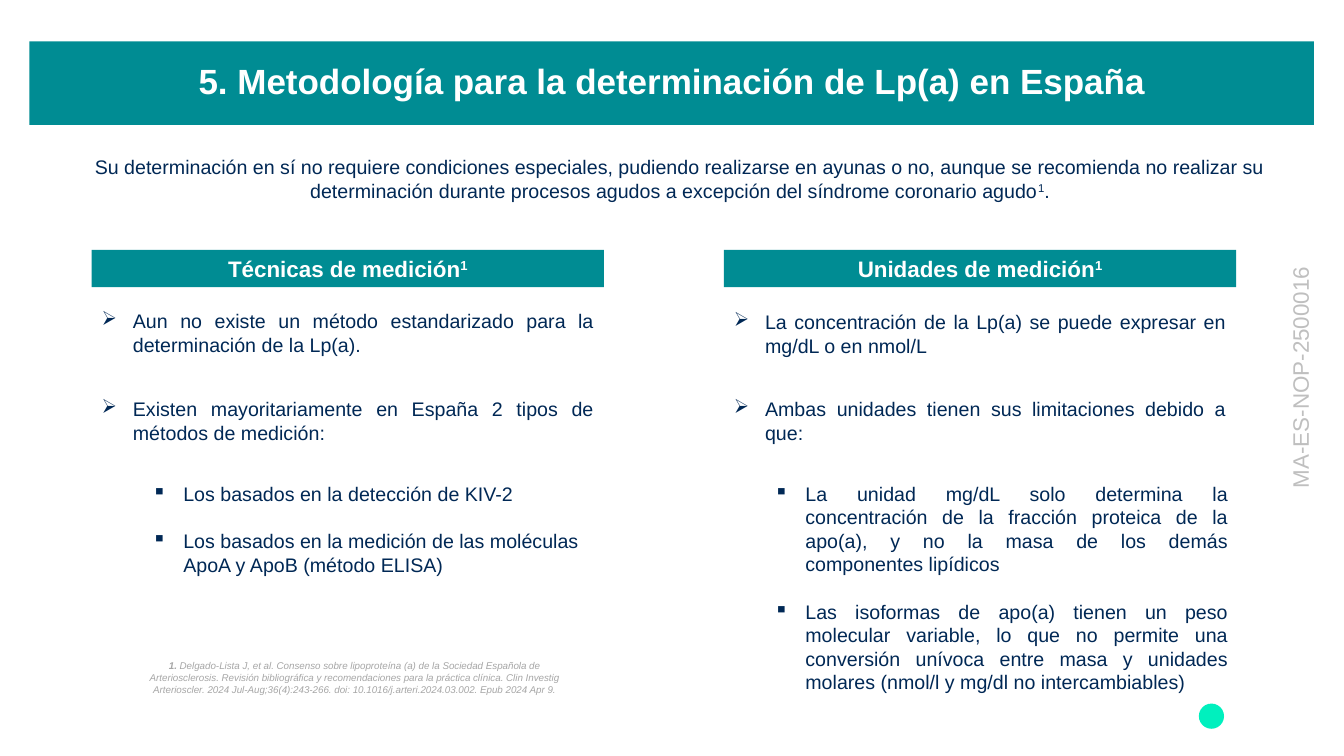
from dataclasses import dataclass
from typing import Optional

from lxml import etree
from pptx import Presentation
from pptx.dml import color
from pptx.enum import shapes, text
from pptx.oxml import ns
from pptx.util import Inches, Pt

COLORS = {
    "teal": "008C93",
    "navy": "002855",
    "mint": "00F0BE",
    "white": "FFFFFF",
    "citation": "A6A6A6",
    "code": "BFBFBF",
}
FONT = "Arial"
CENTER = text.PP_ALIGN.CENTER
JUSTIFY = text.PP_ALIGN.JUSTIFY
LEFT = text.PP_ALIGN.LEFT
COLUMN_WIDTH = 5.08
HANGING = 0.31
LINE_GAP = 17


@dataclass(frozen=True)
class Span:
    text: str
    raised: bool = False
    bold: Optional[bool] = None


@dataclass(frozen=True)
class Block:
    left: float
    top: float
    width: float
    height: float
    paras: list[list[Span]]
    size: float = 14
    color: str = "navy"
    align: text.PP_ALIGN = CENTER
    fill: Optional[str] = None
    bullet: Optional[str] = None
    indent: float = HANGING
    bold: bool = False
    italic: bool = False
    rotation: float = 0


def rgb(name: str) -> color.RGBColor:
    return color.RGBColor.from_string(COLORS[name])


def set_bullet(para, bullet: str, indent: float) -> None:
    props = para._p.get_or_add_pPr()
    props.set("marL", str(Inches(indent)))
    props.set("indent", str(-Inches(HANGING)))
    etree.SubElement(props, ns.qn("a:buChar")).set("char", bullet)


def set_font(font, size: float, color_name: str, bold: bool, italic: bool = False) -> None:
    font.name = FONT
    font.size = Pt(size)
    font.bold = bold
    font.italic = italic
    font.color.rgb = rgb(color_name)


def place(shape, left: float, top: float, width: float, height: float) -> None:
    shape.left, shape.top = Inches(left), Inches(top)
    shape.width, shape.height = Inches(width), Inches(height)


def fill_plain(shape, color_name: str) -> None:
    shape.fill.solid()
    shape.fill.fore_color.rgb = rgb(color_name)
    shape.line.fill.background()


def add_block(page, block: Block) -> None:
    bounds = [Inches(n) for n in (block.left, block.top, block.width, block.height)]
    if block.fill:
        box = page.shapes.add_shape(shapes.MSO_SHAPE.RECTANGLE, *bounds)
        box.shadow.inherit = False
        fill_plain(box, block.fill)
    else:
        box = page.shapes.add_textbox(*bounds)
    box.rotation = block.rotation
    frame = box.text_frame
    frame.word_wrap = True
    frame.auto_size = text.MSO_AUTO_SIZE.SHAPE_TO_FIT_TEXT
    frame.vertical_anchor = text.MSO_ANCHOR.TOP
    for index, spans in enumerate(block.paras):
        para = frame.add_paragraph() if index else frame.paragraphs[0]
        if block.bullet:
            set_bullet(para, block.bullet, block.indent)
        para.alignment = block.align
        if index:
            para.space_before = Pt(LINE_GAP)
        set_font(para.font, block.size, block.color, block.bold, block.italic)
        for span in spans:
            run = para.add_run()
            run.text = span.text
            if span.bold is not None:
                run.font.bold = span.bold
            if span.raised:
                run._r.get_or_add_rPr().set("baseline", "30000")


def add_title(page, wording: str) -> None:
    title = page.shapes.title
    place(title, 0.29, 0.41, 12.74, 0.83)
    fill_plain(title, "teal")
    frame = title.text_frame
    frame.text = wording
    frame.word_wrap = True
    frame.auto_size = text.MSO_AUTO_SIZE.NONE
    frame.vertical_anchor = text.MSO_ANCHOR.MIDDLE
    frame.margin_left = frame.margin_right = frame.margin_top = frame.margin_bottom = 0
    para = frame.paragraphs[0]
    para.alignment = CENTER
    para.line_spacing = 0.9
    set_font(para.font, 25, "white", True)


def heading(left: float, wording: str) -> Block:
    return Block(left, 2.48, COLUMN_WIDTH, 0.37, [[Span(wording), Span("1", raised=True)]],
                 size=16, color="white", fill="teal", bold=True)


def point(left: float, top: float, wording: str) -> Block:
    return Block(left, top, COLUMN_WIDTH, 0.57, [[Span(wording)]], align=JUSTIFY, bullet="➢")


TECHNIQUES, UNITS = 0.91, 7.18
BLOCKS = [
    Block(1.37, 6.5, 4.29, 0.45, [[
        Span("1. ", bold=True),
        Span("Delgado-Lista J, et al. Consenso sobre lipoproteína (a) de la Sociedad Española de "
             "Arteriosclerosis. Revisión bibliográfica y recomendaciones para la práctica clínica. "
             "Clin Investig Arterioscler. 2024 Jul-Aug;36(4):243-266. "
             "doi: 10.1016/j.arteri.2024.03.002. Epub 2024 Apr 9."),
    ]], size=7, color="citation", fill="white", italic=True),
    Block(0.46, 1.49, 12.57, 0.57, [[
        Span("Su determinación en sí no requiere condiciones especiales, pudiendo realizarse en "
             "ayunas o no, aunque se recomienda no realizar su determinación durante procesos "
             "agudos a excepción del síndrome coronario agudo"),
        Span("1", raised=True),
        Span("."),
    ]]),
    heading(TECHNIQUES, "Técnicas de medición"),
    point(TECHNIQUES, 3.02, "Aun no existe un método estandarizado para la determinación de la Lp(a)."),
    point(TECHNIQUES, 3.89, "Existen mayoritariamente en España 2 tipos de métodos de medición:"),
    Block(TECHNIQUES, 4.73, 5.22, 1.04, [
        [Span("Los basados en la detección de KIV-2")],
        [Span("Los basados en la medición de las moléculas ApoA y ApoB (método ELISA)")],
    ], align=LEFT, bullet="▪", indent=0.81),
    heading(UNITS, "Unidades de medición"),
    point(UNITS, 3.03, "La concentración de la Lp(a) se puede expresar en mg/dL o en nmol/L"),
    point(UNITS, 3.89, "Ambas unidades tienen sus limitaciones debido a que:"),
    Block(7.58, 4.73, 4.7, 2.22, [
        [Span("La unidad mg/dL solo determina la concentración de la fracción proteica de la "
              "apo(a), y no la masa de los demás componentes lipídicos")],
        [Span("Las isoformas de apo(a) tienen un peso molecular variable, lo que no permite una "
              "conversión unívoca entre masa y unidades molares (nmol/l y mg/dl no "
              "intercambiables)")],
    ], align=JUSTIFY, fill="white", bullet="▪"),
    Block(11.48, 3.56, 2.83, 0.37, [[Span("MA-ES-NOP-2500016")]],
          size=16, color="code", rotation=270),
]


def main() -> None:
    deck = Presentation()
    deck.slide_width, deck.slide_height = Inches(13.33), Inches(7.5)
    page = deck.slides.add_slide(deck.slide_layouts.get_by_name("Title Only"))
    add_title(page, "5. Metodología para la determinación de Lp(a) en España")
    emblem = page.shapes.add_shape(
        shapes.MSO_SHAPE.OVAL, Inches(11.89), Inches(6.98), Inches(0.25), Inches(0.25))
    emblem.shadow.inherit = False
    fill_plain(emblem, "mint")
    for block in BLOCKS:
        add_block(page, block)
    deck.save("out.pptx")


if __name__ == "__main__":
    main()
